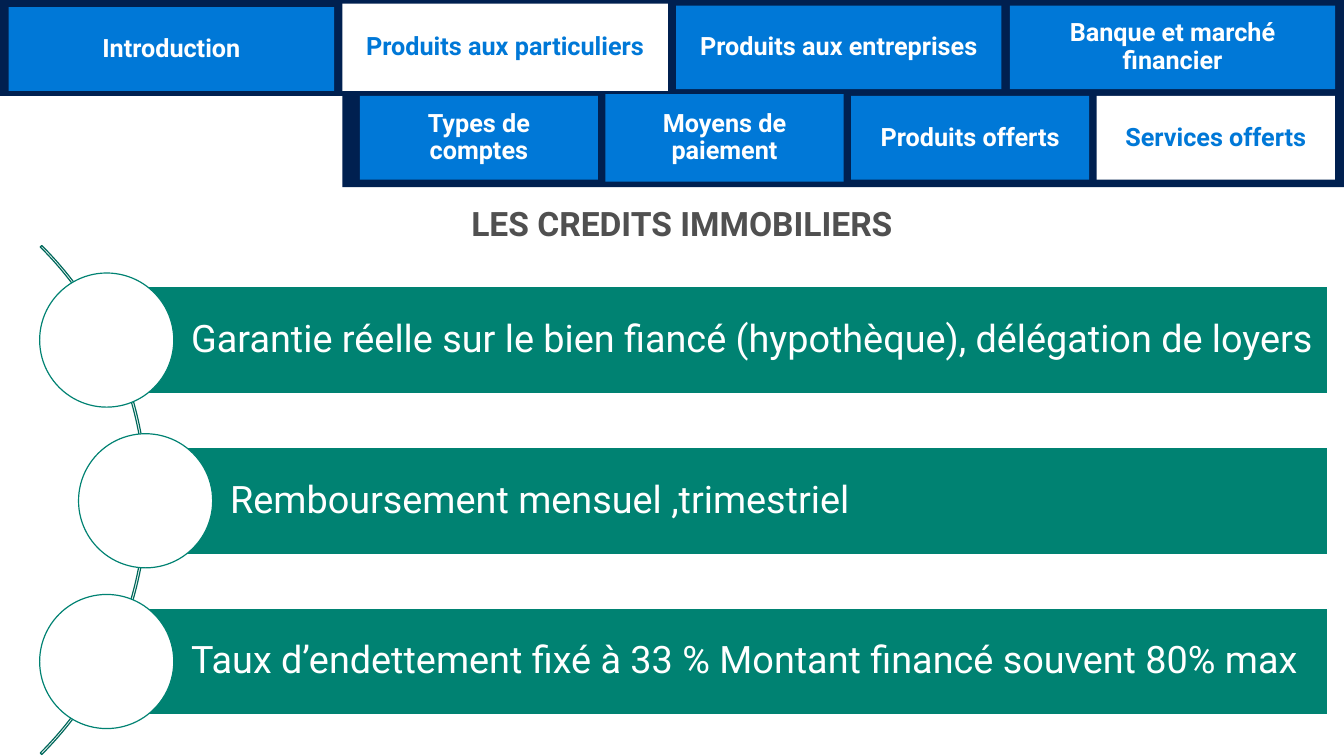
import pptx
import pptx.util
import pptx.dml.color
import pptx.enum.shapes
import pptx.enum.text

Cm, Pt = pptx.util.Cm, pptx.util.Pt
SHAPE = pptx.enum.shapes.MSO_SHAPE
ALIGN = pptx.enum.text.PP_ALIGN
ANCHOR = pptx.enum.text.MSO_ANCHOR

FONT = "Roboto"
WHITE, NAVY, BLUE, TEAL, DARK_TEAL, GREY = (
    "FFFFFF", "002050", "0078D7", "008272", "00685B", "505050")
SLIDE_W, SLIDE_H = 33.87, 19.05
TITLE = "LES CREDITS IMMOBILIERS"

# Each tab: label, top, height (cm)
MENUS = [
    {"band": (0, 0, SLIDE_W, 2.42), "left": 0.22, "width": 8.2, "pitch": 8.41,
     "current": "Produits aux particuliers",
     "tabs": [("Introduction", 0.18, 2.11),
              ("Produits aux particuliers", 0.09, 2.21),
              ("Produits aux entreprises", 0.14, 2.11),
              ("Banque et marché financier", 0.14, 2.11)]},
    {"band": (8.63, 2.3, SLIDE_W - 8.63, 2.42), "left": 9.07, "width": 6, "pitch": 6.19,
     "current": "Services offerts",
     "tabs": [("Types de comptes", 2.42, 2.11),
              ("Moyens de paiement", 2.37, 2.21),
              ("Produits offerts", 2.42, 2.11),
              ("Services offerts", 2.42, 2.11)]},
]

# Each credit feature: text, horizontal centre of its circle (cm)
FEATURES = [
    ("Garantie réelle sur le bien fiancé (hypothèque), délégation de loyers", 2.69),
    ("Remboursement mensuel ,trimestriel", 3.67),
    ("Taux d’endettement fixé à 33 % Montant financé souvent 80% max", 2.69),
]
FEATURE_Y, FEATURE_PITCH = 8.57, 4.05
BAR_RIGHT, BAR_H, CIRCLE = 33.47, 2.69, 3.38
ARC_BOX = (-14.43, 3.53, 18.14, 18.14)


def color(hex_code):
    return pptx.dml.color.RGBColor.from_string(hex_code)


def add_part(kind, box, fill=None, line=None):
    part = slide.shapes.add_shape(kind, *(Cm(length) for length in box))
    part.shadow.inherit = False
    if fill:
        part.fill.solid()
        part.fill.fore_color.rgb = color(fill)
    else:
        part.fill.background()
    if line:
        part.line.color.rgb = color(line)
        part.line.width = Pt(0.85)
    else:
        part.line.fill.background()
    return part


def write(part, text, size, ink, bold=True, align=ALIGN.CENTER,
          anchor=ANCHOR.MIDDLE, insets=(0.51, 0.41, 0.51, 0.41)):
    frame = part.text_frame
    frame.word_wrap = True
    frame.vertical_anchor = anchor
    (frame.margin_left, frame.margin_top,
     frame.margin_right, frame.margin_bottom) = (Cm(inset) for inset in insets)
    paragraph = frame.paragraphs[0]
    paragraph.alignment = align
    paragraph.line_spacing = 0.9
    run = paragraph.add_run()
    run.text = text
    run.font.name = FONT
    run.font.size = Pt(size)
    run.font.bold = bold
    run.font.color.rgb = color(ink)


deck = pptx.Presentation()
deck.slide_width, deck.slide_height = Cm(SLIDE_W), Cm(SLIDE_H)
slide = deck.slides.add_slide(deck.slide_layouts[6])

arc = add_part(SHAPE.BLOCK_ARC, ARC_BOX, line=DARK_TEAL)
for index, value in enumerate((189, 27, 0.003)):
    arc.adjustments[index] = value

for row, (feature, center_x) in enumerate(FEATURES):
    center_y = FEATURE_Y + row * FEATURE_PITCH
    bar = add_part(SHAPE.RECTANGLE,
                   (center_x, center_y - BAR_H / 2, BAR_RIGHT - center_x, BAR_H),
                   TEAL, WHITE)
    write(bar, feature, 27, WHITE, bold=False, align=ALIGN.LEFT,
          insets=(2.13, 0.17, 0.17, 0.17))
    add_part(SHAPE.OVAL, (center_x - CIRCLE / 2, center_y - CIRCLE / 2, CIRCLE, CIRCLE),
             WHITE, TEAL)

for menu in MENUS:
    add_part(SHAPE.RECTANGLE, menu["band"], NAVY)
    for column, (label, top, height) in enumerate(menu["tabs"]):
        fill, ink = (WHITE, BLUE) if label == menu["current"] else (BLUE, WHITE)
        left = menu["left"] + column * menu["pitch"]
        tab = add_part(SHAPE.RECTANGLE, (left, top, menu["width"], height), fill)
        write(tab, label, 18, ink)

title = slide.shapes.add_textbox(Cm(1.6), Cm(4.83), Cm(31.17), Cm(1.75))
write(title, TITLE, 24, GREY, anchor=ANCHOR.TOP)

deck.save("out.pptx")
